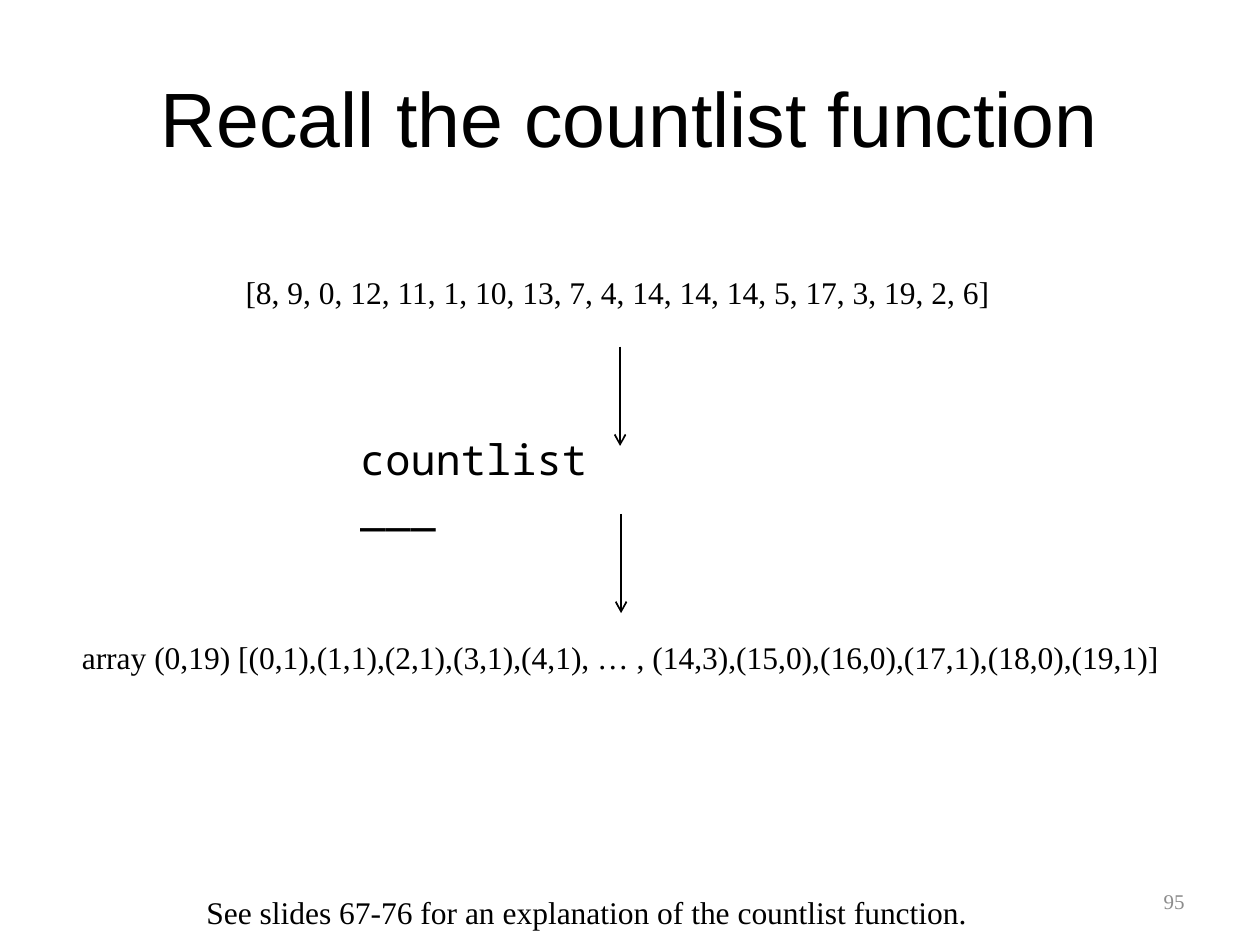
from lxml.etree import SubElement
from pptx import Presentation
from pptx.dml.color import RGBColor
from pptx.enum.shapes import MSO_CONNECTOR
from pptx.enum.text import MSO_ANCHOR, PP_ALIGN
from pptx.oxml.ns import qn
from pptx.util import Cm, Pt

INK = {"black": "000000", "gray": "8C8C8C"}
SERIF = "Times New Roman"
LEFT, MID, RIGHT = PP_ALIGN.LEFT, PP_ALIGN.CENTER, PP_ALIGN.RIGHT

deck = Presentation()
deck.slide_width, deck.slide_height = Cm(25.4), Cm(19.05)
slide = deck.slides.add_slide(deck.slide_layouts[6])

texts = [
    ("Recall the countlist function", 1.27, 0.76, 22.86, 3.18, 44, "Arial", "black", MID, True),
    ("[8, 9, 0, 12, 11, 1, 10, 13, 7, 4, 14, 14, 14, 5, 17, 3, 19, 2, 6]",
     4.7, 5.38, 15.67, 1.02, 18, SERIF, "black", LEFT, False),
    ("countlist ___", 7.01, 8.61, 6.65, 1.27, 24, "Noto Sans Mono", "black", LEFT, True),
    ("array (0,19) [(0,1),(1,1),(2,1),(3,1),(4,1), … , (14,3),(15,0),(16,0),(17,1),(18,0),(19,1)]",
     1.4, 12.73, 22.28, 1.02, 18, SERIF, "black", LEFT, True),
    ("See slides 67-76 for an explanation of the countlist function.",
     3.91, 17.88, 16, 1.02, 18, SERIF, "black", LEFT, False),
    ("95", 18.21, 17.65, 5.92, 1.02, 12, SERIF, "gray", RIGHT, True),
]
for words, left, top, width, height, size, face, tone, align, wrap in texts:
    box = slide.shapes.add_textbox(Cm(left), Cm(top), Cm(width), Cm(height))
    frame = box.text_frame
    frame.word_wrap = wrap
    frame.vertical_anchor = MSO_ANCHOR.TOP if align == LEFT else MSO_ANCHOR.MIDDLE
    line = frame.paragraphs[0]
    line.text = words
    line.alignment = align
    line.font.size = Pt(size)
    line.font.name = face
    line.font.color.rgb = RGBColor.from_string(INK[tone])

for x, top in [(12.5, 6.99), (12.52, 10.36)]:
    arrow = slide.shapes.add_connector(
        MSO_CONNECTOR.STRAIGHT, Cm(x), Cm(top), Cm(x), Cm(top + 2))
    arrow.line.color.rgb = RGBColor.from_string(INK["black"])
    arrow.line.width = Pt(1)
    SubElement(arrow.line._get_or_add_ln(), qn("a:tailEnd"), type="arrow")
    SubElement(arrow._element.spPr, qn("a:effectLst"))

deck.save("out.pptx")
